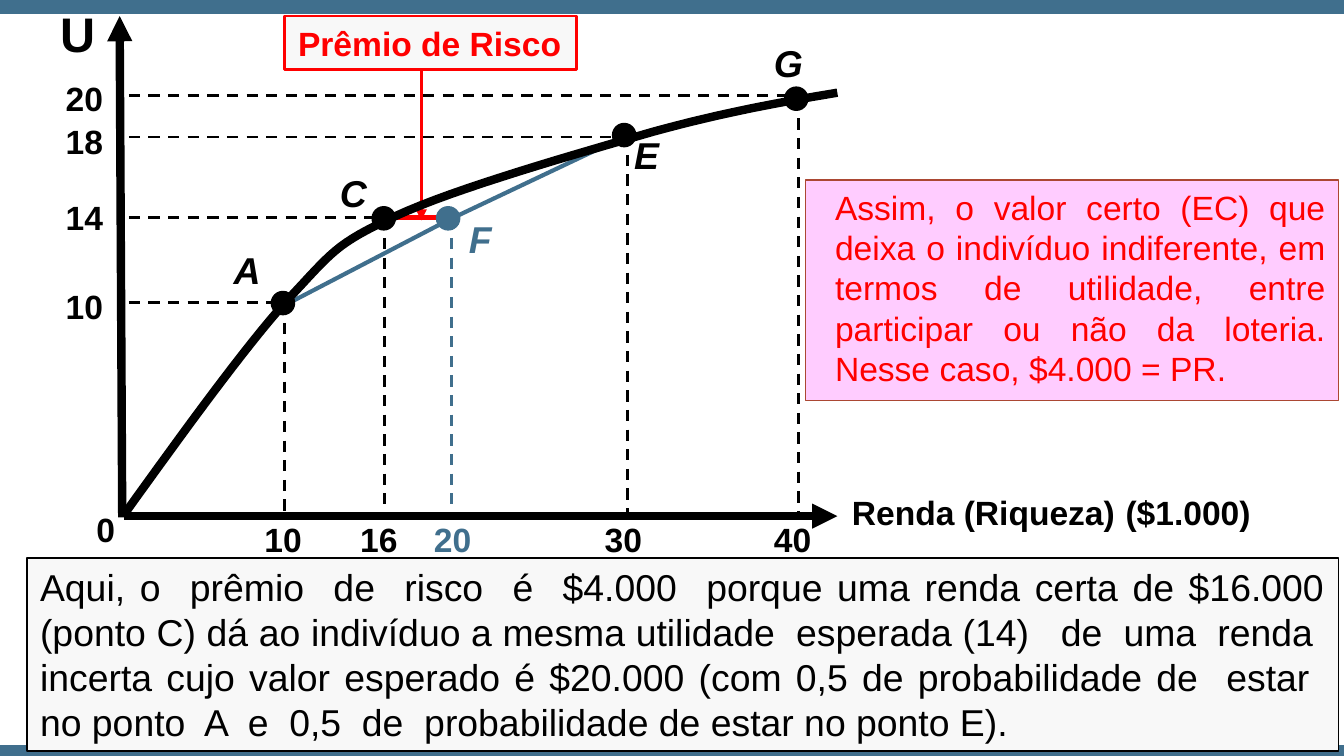
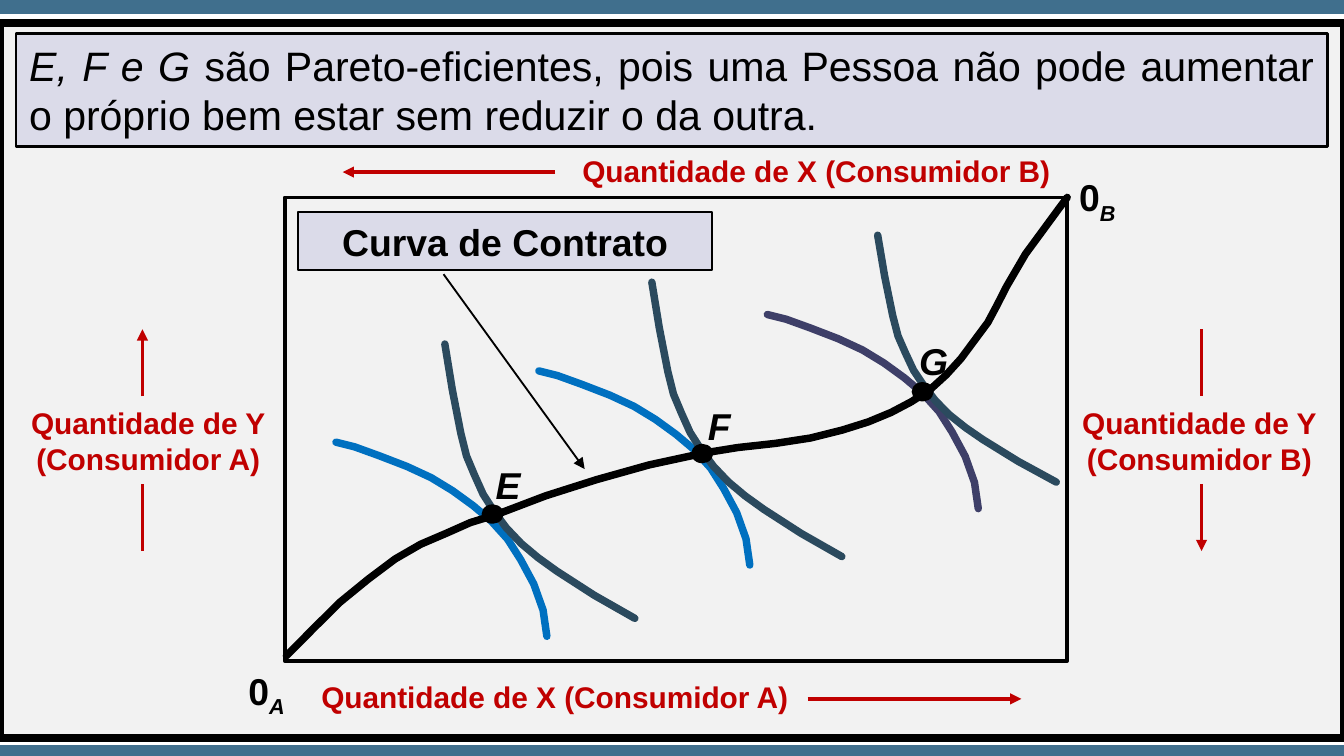
from lxml.etree import SubElement
from pptx import Presentation
from pptx.dml.color import RGBColor
from pptx.enum.dml import MSO_LINE
from pptx.enum.shapes import MSO_CONNECTOR, MSO_SHAPE as SHAPE
from pptx.enum.text import MSO_ANCHOR, MSO_AUTO_SIZE, PP_ALIGN as ALIGN
from pptx.oxml.ns import qn
from pptx.util import Pt

BLACK = RGBColor(0, 0, 0)
TEAL = RGBColor(0x40, 0x6F, 0x8D)
RED = RGBColor(0xFF, 0, 0)
DARK_RED = RGBColor(0xC0, 0, 0)
BRICK = RGBColor(0xAB, 0x47, 0x33)
PINK = RGBColor(0xFF, 0xCC, 0xFF)
PALE = RGBColor(0xF8, 0xF8, 0xF8)
GREY = RGBColor(0xF2, 0xF2, 0xF2)
LILAC = RGBColor(0xDB, 0xDB, 0xE9)
BLUE = RGBColor(0, 0x70, 0xC0)
PURPLE = RGBColor(0x3E, 0x3F, 0x68)
SLATE = RGBColor(0x2B, 0x4A, 0x5E)

FONT = "Arial"
WIDTH, HEIGHT = 720, 405
BANDS = (1.5, 401.5)  # tops

# --- Slide 1: risk premium ---
ORIGIN = (66.5, 276.5)
GUIDE_LEFT = 69
INCOME_TOP, UTILITY_LEFT = 274.3, 28.1
# name, income, utility, guide (x, y), dot centre, name box, income left, utility top, colour
LOTTERY = [
    ("A", "10", "10", (152.6, 162), (151.6, 162.4), (118.1, 128.9), 134.6, 149.8, BLACK),
    ("C", "16", "14", (205.9, 116.6), (205.6, 117), (175, 87.8), 185.8, 102.2, BLACK),
    ("F", "20", None, (241.9, 116.6), (240.1, 117), (244.1, 112.3), 225.4, None, TEAL),
    ("E", "30", "18", (336.2, 73.4), (334.4, 72.4), (332.6, 67), 316.8, 61.2, BLACK),
    ("G", "40", "20", (427.7, 51.1), (426.6, 52.9), (407.5, 18), 407.5, 38.2, BLACK),
]
CHORD = [(151.2, 164.2), (239.8, 118.1), (337, 72)]
# Utility curve: start, then cubic segments (control, control, end)
UTILITY_START = (67, 275)
UTILITY_BEZIERS = [
    ((98.6, 231.1), (130.3, 187.2), (154.1, 160.6)),
    ((178.6, 134.6), (179.3, 131), (211.7, 115.9)),
    ((244.1, 100.8), (310.3, 82.1), (349.9, 70.6)),
    ((389.5, 59.8), (419, 54.7), (448.6, 49.7)),
]
PREMIUM = "Prêmio de Risco"
CERTAIN = ("Assim, o valor certo (EC) que deixa o indivíduo indiferente, em termos de "
           "utilidade, entre participar ou não da loteria. Nesse caso, $4.000 = PR.")
EXPLANATION = (
    "Aqui, o  prêmio  de  risco  é  $4.000  porque uma renda certa de $16.000 "
    "(ponto C) dá ao indivíduo a mesma utilidade  esperada (14)   de  uma  renda  "
    "incerta cujo valor esperado é $20.000 (com 0,5 de probabilidade de  estar  "
    "no ponto  A  e  0,5  de  probabilidade de estar no ponto E).")

# --- Slide 2: contract curve ---
PARETO = [("E, F e G ", {"italic": True}),
          "são Pareto-eficientes, pois uma Pessoa não pode aumentar o próprio bem "
          "estar sem reduzir o da outra."]
CONTRACT = "Curva de Contrato"
# text lines, box
AXIS_TITLES = [
    (["Quantidade de Y", "(Consumidor A)"], (8.6, 213.1, 141.8, 46.1)),
    (["Quantidade de Y", "(Consumidor B)"], (571.7, 213.1, 141.8, 46.1)),
    (["Quantidade de X (Consumidor B)"], (303.1, 78.5, 268.6, 26.6)),
    (["Quantidade de X (Consumidor A)"], (163.4, 360, 267.8, 26.6)),
]
# start, end, arrow at the end
AXIS_LINES = [
    ((76.3, 295.2), (76.3, 259.2), False),
    ((76.3, 212.4), (76.3, 176.4), True),
    ((643.7, 176.4), (643.7, 212.4), False),
    ((643.7, 259.2), (643.7, 295.2), True),
    ((297.4, 92.2), (183.6, 92.2), True),
    ((432.7, 374.4), (547.2, 374.4), True),
]
CORNERS = [("A", 126, 354.2), ("B", 571, 90)]
CONCAVE = [(0, 0), (10, 2.5), (23, 7.2), (38, 13), (51, 19), (62.5, 26), (73.5, 34),
           (83, 42), (92, 52), (99, 63), (106, 76), (111, 90), (113, 104)]
CONVEX = [(0, 0), (4, 24.5), (8.6, 48), (11.6, 60), (15.8, 70), (20.5, 80.5),
          (26.6, 90), (33, 98.6), (41, 107), (50, 114.5), (60, 121.7),
          (80, 134.6), (101.8, 147)]
# name, dot centre, name box, concave start, concave colour, convex start, convex scale
TANGENCIES = [
    ("E", (263.9, 275.4), (258.5, 244.1), (180, 236.9), BLUE, (238.3, 184.3), (1, 1)),
    ("F", (376.2, 243), (372.2, 212.4), (288.7, 198.7), BLUE, (349.2, 151.2), (1, 1)),
    ("G", (494.3, 209.9), (485.3, 177.8), (411.1, 168.5), PURPLE, (470.2, 126), (0.94, 0.9)),
]
CONTRACT_CURVE = [
    (153.4, 351.4), (168.5, 336.2), (182.2, 322.6), (197.3, 310.3), (211.7, 299.5),
    (225.4, 291.6), (239, 285.8), (252, 280), (265.7, 275.8), (292.3, 265.7),
    (319.7, 257), (347.8, 249.1), (378, 242.6), (395.3, 239.8), (415.4, 237.6),
    (434.2, 234.7), (451.4, 230.4), (465.1, 226.1), (477.4, 221), (488.2, 215.3),
    (498.2, 208.8), (506.9, 200.9), (514.8, 192.2), (529.2, 172.8), (534.2, 163.4),
    (539.3, 153.4), (549.4, 136.1), (555.8, 127.4), (567.4, 111.6), (571.7, 105.8)]


def write(sp, paras, size, color, bold=False, italic=False, align=ALIGN.LEFT,
          wrap=True, grow=True):
    """Fill a shape; each paragraph is a list of strings or (string, format) pairs."""
    tf = sp.text_frame
    tf.word_wrap = wrap
    tf.auto_size = MSO_AUTO_SIZE.SHAPE_TO_FIT_TEXT if grow else MSO_AUTO_SIZE.NONE
    tf.vertical_anchor = MSO_ANCHOR.TOP
    for i, runs in enumerate(paras):
        p = tf.add_paragraph() if i else tf.paragraphs[0]
        p.alignment = align
        for run in runs:
            text, extra = (run, {}) if isinstance(run, str) else run
            r = p.add_run()
            r.text = text
            style = {"name": FONT, "size": Pt(size), "bold": bold, "italic": italic}
            for key, value in {**style, **extra}.items():
                setattr(r.font, key, value)
            r.font.color.rgb = color
    return tf


def label(s, text, box, size, color=BLACK, **style):
    paras = [[text]] if isinstance(text, str) else text
    sp = s.shapes.add_textbox(*map(Pt, box))
    return write(sp, paras, size, color, bold=True, wrap=False, **style)


def shape(s, kind, box, fill, line, weight):
    sp = s.shapes.add_shape(kind, *map(Pt, box))
    sp.shadow.inherit = False
    if fill is None:
        sp.fill.background()
    else:
        sp.fill.solid()
        sp.fill.fore_color.rgb = fill
    sp.line.color.rgb = line
    sp.line.width = Pt(weight)
    return sp


def dot(s, centre, w, h, color=BLACK):
    x, y = centre
    shape(s, SHAPE.OVAL, (x - w / 2, y - h / 2, w, h), color, color, 1)


def line(s, start, end, color, weight, dash=False, arrow=False):
    c = s.shapes.add_connector(MSO_CONNECTOR.STRAIGHT, *map(Pt, start + end))
    c.line.color.rgb = color
    c.line.width = Pt(weight)
    if dash:
        c.line.dash_style = MSO_LINE.DASH
    if arrow:
        SubElement(c.line._get_or_add_ln(), qn("a:tailEnd"), type="triangle")
    SubElement(c._element.spPr, qn("a:effectLst"))


def curve(s, points, color, weight, cap="flat"):
    first, *rest = [tuple(map(Pt, point)) for point in points]
    builder = s.shapes.build_freeform(*first)
    builder.add_line_segments(rest, close=False)
    sp = builder.convert_to_shape()
    sp.shadow.inherit = False
    sp.fill.background()
    sp.line.color.rgb = color
    sp.line.width = Pt(weight)
    ln = sp.line._get_or_add_ln()
    ln.set("cap", cap)
    SubElement(ln, qn("a:round"))


def bezier_points(start, segments, steps=16):
    points = [start]
    for c1, c2, end in segments:
        begin = points[-1]
        for i in range(1, steps + 1):
            t = i / steps
            weights = ((1 - t) ** 3, 3 * t * (1 - t) ** 2, 3 * t * t * (1 - t), t ** 3)
            points.append(tuple(sum(w * q[k] for w, q in zip(weights, (begin, c1, c2, end)))
                                for k in (0, 1)))
    return points


def placed(points, start, scale=(1, 1)):
    return [tuple(o + k * v for o, k, v in zip(start, scale, point)) for point in points]


def new_slide(prs):
    s = prs.slides.add_slide(prs.slide_layouts[6])
    for top in BANDS:
        shape(s, SHAPE.RECTANGLE, (0, top, WIDTH, 3.6), TEAL, TEAL, 4.33)
    return s


def risk_premium_slide(prs):
    s = new_slide(prs)
    for _, _, utility, (x, y), centre, _, _, _, color in LOTTERY:
        line(s, (x, centre[1]), (x, ORIGIN[1] - 0.7), color, 1.5, dash=True)
        if utility:
            line(s, (GUIDE_LEFT, y), (centre[0] - 4, y), color, 1.5, dash=True)
    line(s, (209.5, 116.6), (243.4, 116.6), RED, 3)
    curve(s, CHORD, TEAL, 2.25)
    premium = shape(s, SHAPE.RECTANGLE, (152.6, 8.6, 156.2, 28.8), PALE, RED, 1.5)
    write(premium, [[PREMIUM]], 18, RED, bold=True)
    line(s, (225.7, 37), (225.7, 118.1), RED, 1.5, arrow=True)

    line(s, (65.5, 277.2), (64.1, 8.6), BLACK, 4.5, arrow=True)
    line(s, ORIGIN, (448.6, ORIGIN[1]), BLACK, 4.5, arrow=True)
    label(s, "U", (25.2, -1.4, 33.1, 38.9), 26)
    label(s, "0", (44.6, 269.3, 24.5, 28.8), 18)
    label(s, [["Renda (Riqueza)", (" ", {"size": Pt(20)}), "($1.000)"]],
          (449.3, 257.8, 229.7, 31), 18)
    curve(s, bezier_points(UTILITY_START, UTILITY_BEZIERS), BLACK, 4.5)

    for name, income, utility, _, centre, name_at, left, top, color in LOTTERY:
        dot(s, centre, 12.2, 12.2, color)
        label(s, name, (*name_at, 28.1, 31), 20, color, italic=True)
        label(s, income, (left, INCOME_TOP, 34.6, 28.8), 18, color)
        if utility:
            label(s, utility, (UTILITY_LEFT, top, 34.6, 28.8), 18)

    box = shape(s, SHAPE.RECTANGLE, (14.4, 298.8, 702.7, 103.7), PALE, BLACK, 1)
    write(box, [[EXPLANATION]], 20, BLACK, align=ALIGN.JUSTIFY)
    box = shape(s, SHAPE.RECTANGLE, (431.7, 96.5, 285.5, 118.1), PINK, BRICK, 0.75)
    p = write(box, [[CERTAIN]], 18, RED, align=ALIGN.JUSTIFY, grow=False).paragraphs[0]
    p.space_before = Pt(4)
    p._p.get_or_add_pPr().set("marL", str(Pt(8.6)))


def contract_curve_slide(prs):
    s = new_slide(prs)
    shape(s, SHAPE.RECTANGLE, (0, 12.2, WIDTH, 383), GREY, BLACK, 4.33)
    shape(s, SHAPE.RECTANGLE, (152.6, 105.8, 419, 248.4), None, BLACK, 2)
    for consumer, x, y in CORNERS:
        tf = label(s, [["0", (consumer, {"italic": True})]], (x, y, 35.6, 31), 20)
        tf.paragraphs[0].runs[1]._r.get_or_add_rPr().set("baseline", "-25000")
    for lines, box in AXIS_TITLES:
        label(s, [[text] for text in lines], box, 16, DARK_RED, align=ALIGN.CENTER)
    for start, end, arrow in AXIS_LINES:
        line(s, start, end, DARK_RED, 2, arrow=arrow)

    for _, _, _, concave_at, color, convex_at, scale in TANGENCIES:
        curve(s, placed(CONCAVE, concave_at), color, 4, "rnd")
        curve(s, placed(CONVEX, convex_at, scale), SLATE, 4, "rnd")
    curve(s, CONTRACT_CURVE, BLACK, 4, "rnd")
    for name, centre, name_at, *_ in TANGENCIES:
        dot(s, centre, 10.8, 9.4)
        label(s, name, (*name_at, 25.2, 24.5), 20, italic=True)

    box = shape(s, SHAPE.RECTANGLE, (159.8, 113.8, 221.8, 31), LILAC, BLACK, 1)
    write(box, [[CONTRACT]], 20, BLACK, bold=True, align=ALIGN.CENTER)
    line(s, (237.6, 146.9), (313.2, 251.3), BLACK, 1, arrow=True)
    box = shape(s, SHAPE.RECTANGLE, (8.6, 18, 702.7, 60.5), LILAC, BLACK, 1.5)
    write(box, [PARETO], 22, BLACK, align=ALIGN.JUSTIFY)


def main():
    prs = Presentation()
    prs.slide_width, prs.slide_height = Pt(WIDTH), Pt(HEIGHT)
    risk_premium_slide(prs)
    contract_curve_slide(prs)
    prs.save("out.pptx")


if __name__ == "__main__":
    main()
